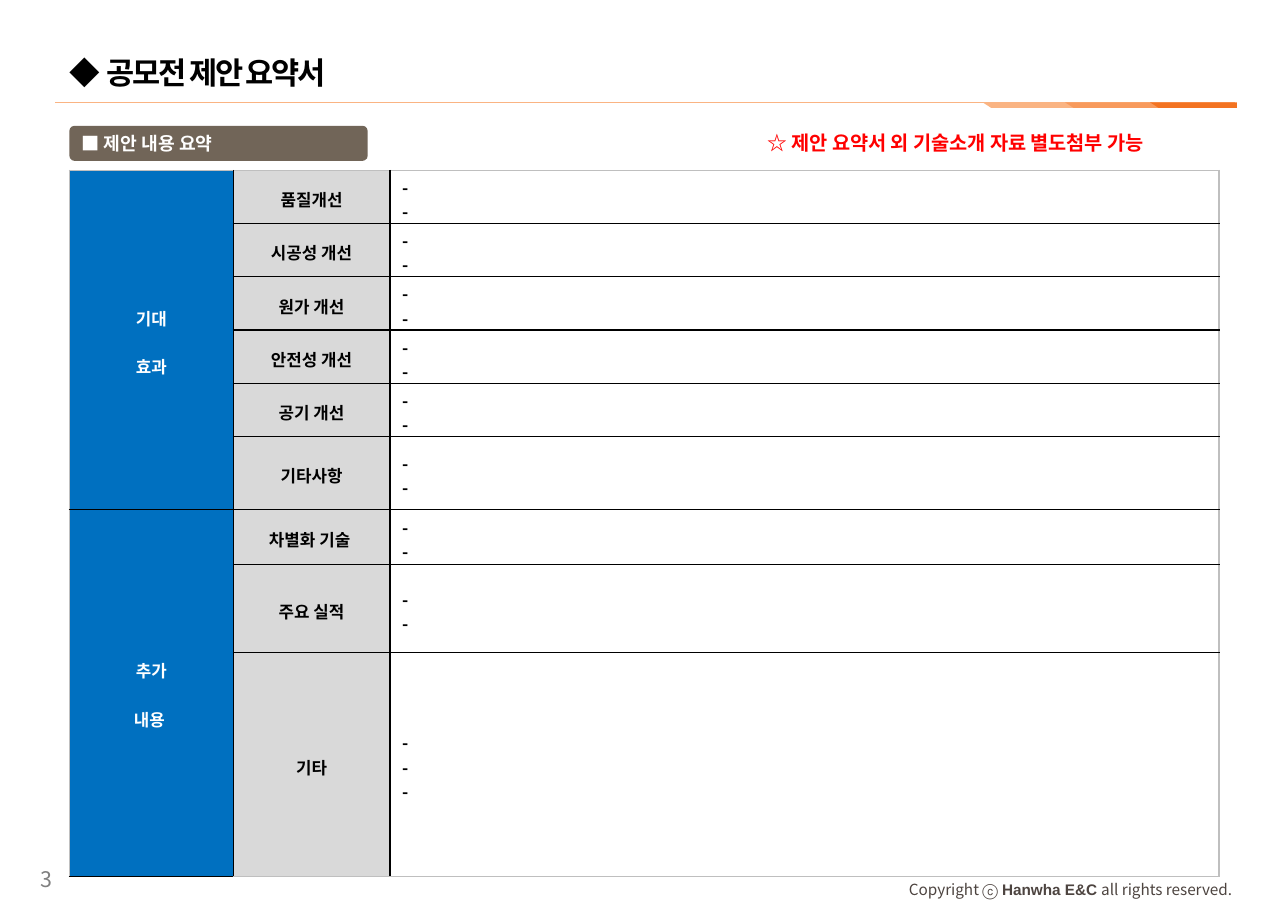
from lxml.etree import SubElement
from pptx import Presentation
from pptx.dml.color import RGBColor
from pptx.enum.shapes import MSO_CONNECTOR, MSO_SHAPE
from pptx.enum.text import MSO_ANCHOR, PP_ALIGN
from pptx.oxml.ns import qn
from pptx.util import Cm, Pt

SANS = "Noto Sans CJK KR"
BLACK, WHITE, GREY = "000000", "FFFFFF", "BFBFBF"
COLS = [3.78, 3.61, 19.12]
# label, row height in cm, number of dashes
ROWS = [
    ("품질개선", 1.22, 2), ("시공성 개선", 1.23, 2), ("원가 개선", 1.23, 2),
    ("안전성 개선", 1.23, 2), ("공기 개선", 1.22, 2), ("기타사항", 1.68, 2),
    ("차별화 기술 ", 1.28, 2), ("주요 실적", 2.03, 2), ("기타", 5.15, 3),
]
# lines, first row, last row
GROUPS = [(["기대", "효과"], 0, 5), (["추가", "내용 "], 6, 8)]
# left, right, slant at the right, colour
TABS = [
    (22.66, 24.87, 0.23, "FAB483"),
    (24.56, 26.77, 0.23, "F89A5C"),
    (26.52, 28.52, 0, "F37321"),
]


def color(code):
    return RGBColor.from_string(code)


def paint(shape, code):
    shape.fill.solid()
    shape.fill.fore_color.rgb = color(code)
    shape.line.fill.background()
    shape.shadow.inherit = False


def add_run(para, text, size, code, bold=False, face=SANS, gap=None):
    """Add a run; gap is the letter spacing in hundredths of a point."""
    run = para.add_run()
    run.text = text
    font = run.font
    font.size, font.bold, font.name = Pt(size), bold, face
    font.color.rgb = color(code)
    props = run._r.get_or_add_rPr()
    SubElement(props, qn("a:ea")).set("typeface", face)
    if gap is not None:
        props.set("spc", str(gap))


def add_box(slide, left, top, width, height, wrap=True):
    """Add a text box and return its text frame."""
    box = slide.shapes.add_textbox(Cm(left), Cm(top), Cm(width), Cm(height))
    box.text_frame.word_wrap = wrap
    return box.text_frame


def add_rule(slide):
    rule = slide.shapes.add_connector(
        MSO_CONNECTOR.STRAIGHT, Cm(1.27), Cm(2.36), Cm(28.47), Cm(2.36))
    rule.line.color.rgb = color("FAB483")
    rule.line.width = Pt(0.75)
    SubElement(rule._element.spPr, qn("a:effectLst"))


def add_tab(slide, left, right, slant, code):
    top, base = Cm(2.36), Cm(2.49)
    pen = slide.shapes.build_freeform(Cm(left), top)
    pen.add_line_segments([
        (Cm(left + 0.2), base), (Cm(right), base), (Cm(right - slant), top)])
    paint(pen.convert_to_shape(), code)


def add_badge(slide):
    badge = slide.shapes.add_shape(
        MSO_SHAPE.ROUNDED_RECTANGLE, Cm(1.6), Cm(2.9), Cm(6.88), Cm(0.81))
    badge.adjustments[0] = 0.15
    paint(badge, "716558")
    frame = badge.text_frame
    frame.word_wrap = False
    frame.vertical_anchor = MSO_ANCHOR.MIDDLE
    para = frame.paragraphs[0]
    para.alignment = PP_ALIGN.LEFT
    add_run(para, "■ 제안 내용 요약", 11.9, WHITE, True)


def set_edge(cell, side, code):
    line = SubElement(cell._tc.get_or_add_tcPr(), qn("a:" + side), w="12700")
    fill = SubElement(line, qn("a:solidFill"))
    SubElement(fill, qn("a:srgbClr"), val=code)


def style_cell(cell, row, col):
    """Draw grey outer and black inner edges, then fill by column."""
    outer = {
        "lnL": col == 0, "lnR": col == len(COLS) - 1,
        "lnT": row == 0, "lnB": row == len(ROWS) - 1,
    }
    for side, edge in outer.items():
        set_edge(cell, side, GREY if edge else BLACK)
    cell.fill.solid()
    cell.fill.fore_color.rgb = color(["0070C0", "D9D9D9", WHITE][col])
    cell.vertical_anchor = MSO_ANCHOR.MIDDLE
    cell.margin_left = cell.margin_right = Cm(0.28)
    cell.margin_top, cell.margin_bottom = Cm(0.1), Cm(0)


def fill_cell(cell, lines, code, align, gap=0):
    frame = cell.text_frame
    for i, text in enumerate(lines):
        para = frame.add_paragraph() if i else frame.paragraphs[0]
        para.alignment = align
        if i and gap:
            para.space_before = Pt(gap)
        add_run(para, text, 11, code, True)


def add_grid(slide):
    table = slide.shapes.add_table(
        len(ROWS), len(COLS), Cm(1.6), Cm(3.93),
        Cm(sum(COLS)), Cm(sum(row[1] for row in ROWS))).table
    table.first_row = table.horz_banding = False
    for col, width in enumerate(COLS):
        table.columns[col].width = Cm(width)
    for row, (label, height, count) in enumerate(ROWS):
        table.rows[row].height = Cm(height)
        for col in range(len(COLS)):
            style_cell(table.cell(row, col), row, col)
        fill_cell(table.cell(row, 1), [label], BLACK, PP_ALIGN.CENTER)
        fill_cell(table.cell(row, 2), ["-"] * count, BLACK, PP_ALIGN.LEFT)
    for lines, first, last in GROUPS:
        head = table.cell(first, 0)
        head.merge(table.cell(last, 0))
        fill_cell(head, lines, WHITE, PP_ALIGN.CENTER, 16)


def add_title(slide):
    frame = add_box(slide, 1.6, 1.24, 17.73, 0.86)
    frame.margin_left = frame.margin_top = frame.margin_bottom = 0
    frame.vertical_anchor = MSO_ANCHOR.MIDDLE
    para = frame.paragraphs[0]
    add_run(para, "◆ ", 20, BLACK, True, gap=0)
    add_run(para, "공모전 제안 요약서", 20, BLACK, True, gap=-150)


def add_foot(slide):
    para = add_box(slide, 20.35, 20.09, 8.31, 0.76).paragraphs[0]
    para.alignment = PP_ALIGN.RIGHT
    para.line_spacing = 1.2
    ink = "4D4440"
    add_run(para, "Copyright ", 10, ink)
    add_run(para, "ⓒ ", 10, ink, face="Arial")
    add_run(para, "Hanwha E&C ", 10, ink, True, "Arial")
    add_run(para, "all rights reserved.", 10, ink)
    page = add_box(slide, 0.69, 19.84, 1.14, 0.86, False)
    add_run(page.paragraphs[0], "3", 14, "808080")


def main():
    deck = Presentation()
    deck.slide_width, deck.slide_height = Cm(29.7), Cm(21)
    slide = deck.slides.add_slide(deck.slide_layouts[6])
    add_rule(slide)
    for tab in TABS:
        add_tab(slide, *tab)
    add_foot(slide)
    add_grid(slide)
    add_badge(slide)
    add_title(slide)
    note = add_box(slide, 17.45, 2.9, 10.59, 0.81)
    add_run(note.paragraphs[0], "☆ 제안 요약서 외 기술소개 자료 별도첨부 가능",
            12.9, "FF0000", True)
    deck.save("out.pptx")


if __name__ == "__main__":
    main()
